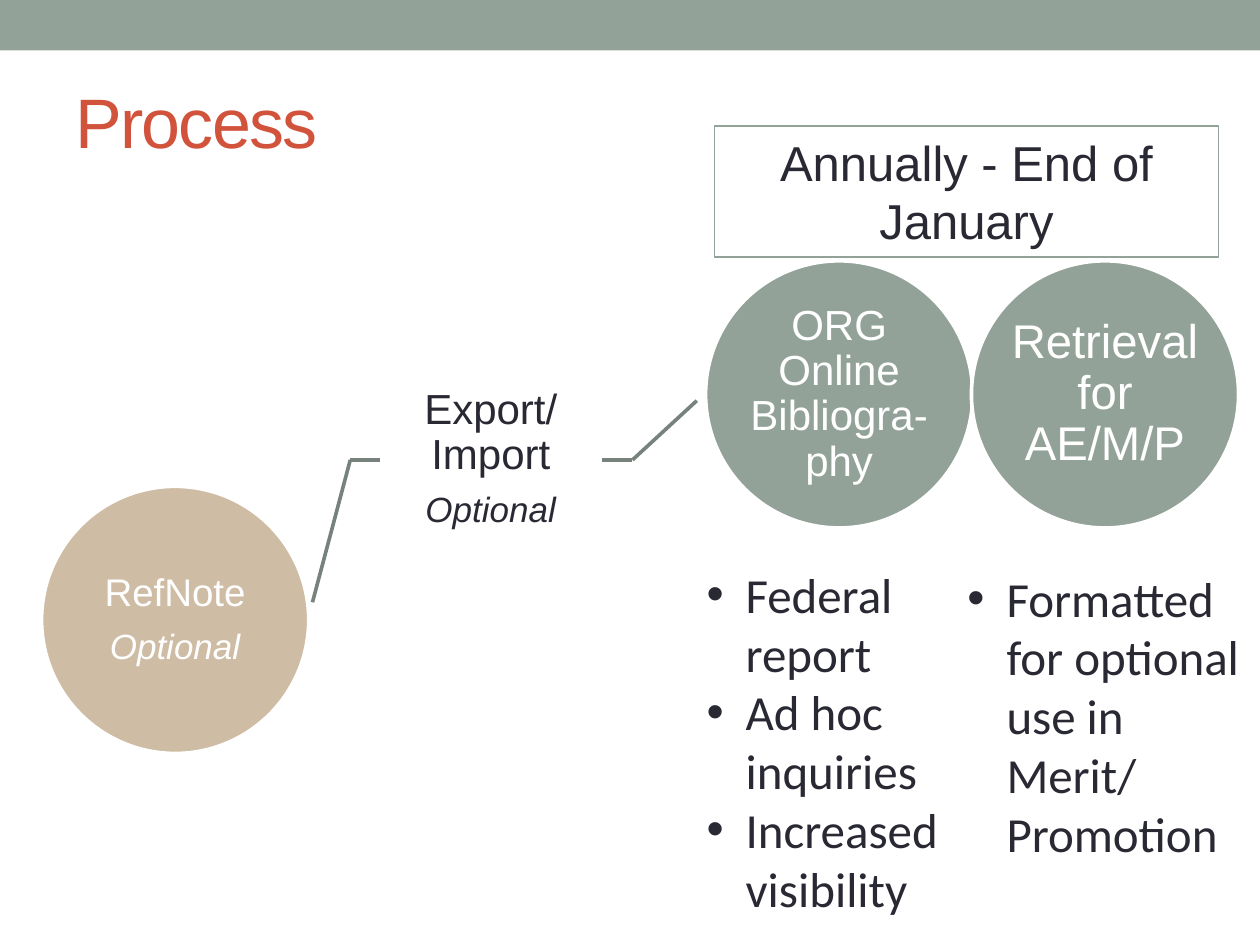
from lxml import etree
from pptx import Presentation
from pptx.dml.color import RGBColor
from pptx.enum.shapes import MSO_CONNECTOR, MSO_SHAPE
from pptx.enum.text import MSO_ANCHOR, PP_ALIGN
from pptx.oxml.ns import qn
from pptx.util import Inches, Pt

SAGE = RGBColor(0x93, 0xA2, 0x99)
SAND = RGBColor(0xCE, 0xBC, 0xA4)
GREY = RGBColor(0x76, 0x82, 0x7B)
RED = RGBColor(0xD2, 0x53, 0x3C)
INK = RGBColor(0x29, 0x29, 0x34)
WHITE = RGBColor(0xFF, 0xFF, 0xFF)

W, H = 10, 7.5
DIAMETER = 2.12
LINE = 2.08
OPTIONAL = ("Optional", 20, True)

# left, top, fill, paragraphs of (text, size, italic)
CIRCLES = [
    (0.33, 3.86, SAND, [("RefNote", 22, False), OPTIONAL]),
    (5.6, 2.07, SAGE, [("ORG Online Bibliogra-phy", 24, False)]),
    (7.71, 2.07, SAGE, [("Retrieval for AE/M/P", 27, False)]),
]
STEP = [("Export/ Import", 24, False), OPTIONAL]
STEP_BOX = (3.02, 3.12, 1.75, 1.05)
# each path bends once between a circle and the step
PATHS = [
    [(2.48, 4.78), (2.78, 3.65), (3.02, 3.65)],
    [(4.78, 3.65), (5.02, 3.65), (5.53, 3.18)],
]
LISTS = [
    ((5.51, 4.43, 2.07, 2.93), ["Federal report", "Ad hoc inquiries", "Increased visibility"]),
    ((7.58, 4.46, 2.42, 2.46), ["Formatted for optional use in Merit/ Promotion"]),
]


def write(shape, paras, color=INK, font="Arial", align=PP_ALIGN.LEFT,
          anchor=MSO_ANCHOR.TOP, inset=None, tight=False, bullet=False, spc=None):
    """Fill a shape with (text, size, italic) paragraphs."""
    tf = shape.text_frame
    tf.word_wrap = True
    tf.vertical_anchor = anchor
    if inset is not None:
        tf.margin_left = tf.margin_right = tf.margin_top = tf.margin_bottom = Inches(inset)
    for i, (text, size, italic) in enumerate(paras):
        p = tf.add_paragraph() if i else tf.paragraphs[0]
        p.alignment = align
        if tight:
            p.line_spacing = 0.9
            p.space_after = Pt(round(size * 0.35))
        if bullet:
            pPr = p._p.get_or_add_pPr()
            pPr.set("marL", str(Inches(0.31)))
            pPr.set("indent", str(-Inches(0.31)))
            etree.SubElement(pPr, qn("a:buFont")).set("typeface", "Arial")
            etree.SubElement(pPr, qn("a:buChar")).set("char", "•")
        r = p.add_run()
        r.text = text
        r.font.name, r.font.size, r.font.italic = font, Pt(size), italic
        r.font.color.rgb = color
        if spc is not None:
            r._r.get_or_add_rPr().set("spc", str(spc))


def add_shape(s, kind, box, fill=None, line=None, width=LINE):
    sp = s.shapes.add_shape(kind, *map(Inches, box))
    sp.shadow.inherit = False
    if fill is None:
        sp.fill.background()
    else:
        sp.fill.solid()
        sp.fill.fore_color.rgb = fill
    if line is None:
        sp.line.fill.background()
    else:
        sp.line.color.rgb = line
        sp.line.width = Pt(width)
    return sp


def add_text(s, box, paras, **fmt):
    write(s.shapes.add_textbox(*map(Inches, box)), paras, **fmt)


def add_line(s, start, end):
    c = s.shapes.add_connector(MSO_CONNECTOR.STRAIGHT, *map(Inches, start + end))
    c.line.color.rgb = GREY
    c.line.width = Pt(LINE)
    etree.SubElement(c._element.spPr, qn("a:effectLst"))


def main():
    prs = Presentation()
    prs.slide_width, prs.slide_height = Inches(W), Inches(H)
    s = prs.slides.add_slide(prs.slide_layouts[6])
    centred = dict(align=PP_ALIGN.CENTER, anchor=MSO_ANCHOR.MIDDLE)

    add_shape(s, MSO_SHAPE.RECTANGLE, (0, 0, W, 0.4), SAGE)
    for left, top, fill, paras in CIRCLES:
        sp = add_shape(s, MSO_SHAPE.OVAL, (left, top, DIAMETER, DIAMETER), fill, WHITE)
        write(sp, paras, color=WHITE, inset=0, tight=True, **centred)
    for path in PATHS:
        for start, end in zip(path, path[1:]):
            add_line(s, start, end)
    add_text(s, STEP_BOX, STEP, inset=0.19, tight=True, **centred)

    add_text(s, (0.5, 0.42, 9, 1.08), [("Process", 40, False)],
             color=RED, anchor=MSO_ANCHOR.MIDDLE, spc=-100)
    for box, items in LISTS:
        add_text(s, box, [(item, 28, False) for item in items], font="Calibri", bullet=True)
    sp = add_shape(s, MSO_SHAPE.RECTANGLE, (5.67, 1, 4, 1.04), line=SAGE, width=0.75)
    write(sp, [("Annually - End of January", 28, False)], align=PP_ALIGN.CENTER)

    prs.save("out.pptx")


if __name__ == "__main__":
    main()
